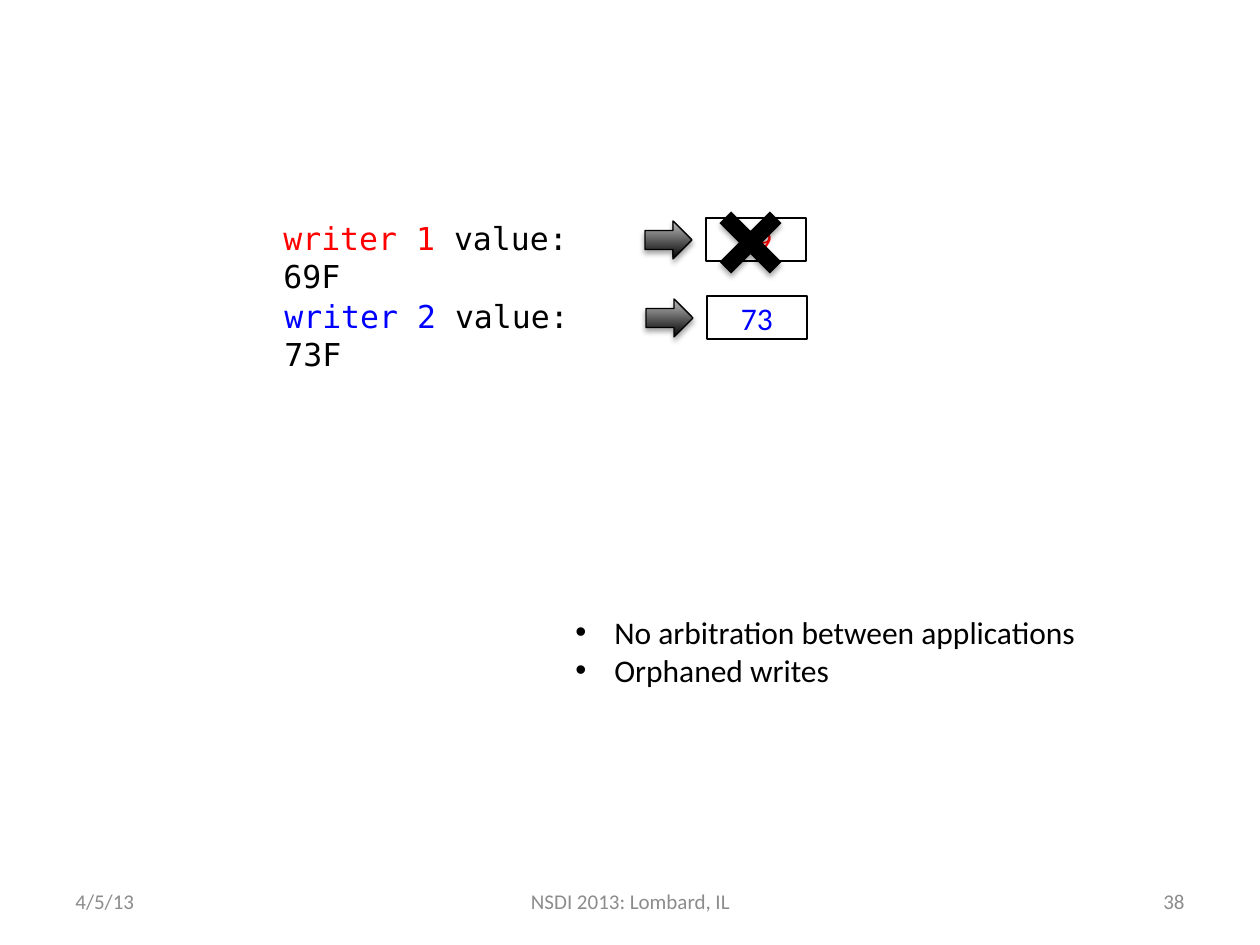
from dataclasses import dataclass

from lxml import etree
from pptx import Presentation, util as u
from pptx.dml.color import RGBColor
from pptx.enum import shapes, text
from pptx.oxml.ns import qn

PX = u.Inches(1) / 126
ROW_STEP = 78


@dataclass(frozen=True)
class Theme:
    black: str = "000000"
    red: str = "FF0000"
    blue: str = "0000FF"
    light: str = "BDBDBD"
    footer: str = "8C8C8C"
    body_font: str = "Calibri"
    code_font: str = "DejaVu Sans Mono"
    body_size: int = 18
    footer_size: int = 12


THEME = Theme()
ALIGN = text.PP_ALIGN
ANCHOR = text.MSO_ANCHOR


def px(length):
    return u.Emu(round(length * PX))


def rgb(color):
    return RGBColor.from_string(color)


def add_bullet(paragraph, indent):
    properties = paragraph._p.get_or_add_pPr()
    properties.set("marL", str(px(indent)))
    properties.set("indent", str(-px(indent)))
    etree.SubElement(properties, qn("a:buFont"), typeface="Arial")
    etree.SubElement(properties, qn("a:buChar"), char="•")


def write_text(shape, paragraphs, *, font=THEME.body_font, size=THEME.body_size,
               align=ALIGN.LEFT, anchor=ANCHOR.TOP, bullet_indent=None):
    """Fill a shape; each paragraph is a list of (wording, color) runs."""
    frame = shape.text_frame
    frame.word_wrap = True
    frame.vertical_anchor = anchor
    for index, runs in enumerate(paragraphs):
        paragraph = frame.add_paragraph() if index else frame.paragraphs[0]
        paragraph.alignment = align
        if bullet_indent:
            add_bullet(paragraph, bullet_indent)
        for wording, color in runs:
            run = paragraph.add_run()
            run.text = wording
            run.font.name = font
            run.font.size = u.Pt(size)
            run.font.color.rgb = rgb(color)


def add_text(slide, box, paragraphs, **text_format):
    shape = slide.shapes.add_textbox(*map(px, box))
    write_text(shape, paragraphs, **text_format)


def add_shape(slide, kind, box, outlined=True):
    shape = slide.shapes.add_shape(kind, *map(px, box))
    shape.shadow.inherit = False
    if outlined:
        shape.line.color.rgb = rgb(THEME.black)
        shape.line.width = u.Pt(0.75)
    else:
        shape.line.fill.background()
    return shape


def add_drop_shadow(shape):
    effects = shape._element.spPr.find(qn("a:effectLst"))
    shadow = etree.SubElement(
        effects, qn("a:outerShdw"), blurRad=str(u.Pt(3.1)), dist=str(u.Pt(1.8)),
        dir="5400000", rotWithShape="0")
    color = etree.SubElement(shadow, qn("a:srgbClr"), val=THEME.black)
    etree.SubElement(color, qn("a:alpha"), val="35000")


def add_value_box(slide, box, value, color):
    shape = add_shape(slide, shapes.MSO_SHAPE.RECTANGLE, box)
    shape.fill.background()
    write_text(shape, [[(value, color)]], align=ALIGN.CENTER, anchor=ANCHOR.MIDDLE)


def add_arrow(slide, box):
    arrow = add_shape(slide, shapes.MSO_SHAPE.RIGHT_ARROW, box)
    arrow.fill.gradient()
    arrow.fill.gradient_angle = 90
    for stop, color, position in zip(arrow.fill.gradient_stops,
                                     (THEME.black, THEME.light), (0, 1)):
        stop.color.rgb = rgb(color)
        stop.position = position
    add_drop_shadow(arrow)


def add_writer(slide, index, value, color):
    shift, drop = index, index * ROW_STEP
    runs = [(f"writer {index + 1}", color), (f" value: {value}F", THEME.black)]
    add_text(slide, (271 + shift, 213 + drop, 318, 50), [runs], font=THEME.code_font)
    add_value_box(slide, (706 + shift, 218 + drop, 100, 43), value, color)
    add_arrow(slide, (645 + shift, 221 + drop, 47, 38))


def add_cross(slide, box):
    cross = add_shape(slide, shapes.MSO_SHAPE.MATH_MULTIPLY, box, outlined=False)
    cross.adjustments[0] = 0.17
    cross.fill.solid()
    cross.fill.fore_color.rgb = rgb(THEME.black)
    add_drop_shadow(cross)


def add_footer(slide, left, width, wording, align):
    add_text(slide, (left, 876, width, 50), [[(wording, THEME.footer)]],
             size=THEME.footer_size, align=align, anchor=ANCHOR.MIDDLE)


def main():
    presentation = Presentation()
    presentation.slide_width, presentation.slide_height = px(1260), px(945)
    slide = presentation.slides.add_slide(presentation.slide_layouts[6])

    for index, (value, color) in enumerate([("69", THEME.red), ("73", THEME.blue)]):
        add_writer(slide, index, value, color)
    add_cross(slide, (702, 194, 97, 97))

    problems = ["No arbitration between applications", "Orphaned writes"]
    add_text(slide, (563, 607, 533, 89),
             [[(problem, THEME.black)] for problem in problems], bullet_indent=39)

    add_footer(slide, 63, 294, "4/5/13", ALIGN.LEFT)
    add_footer(slide, 431, 399, "NSDI 2013: Lombard, IL", ALIGN.CENTER)
    add_footer(slide, 903, 294, "38", ALIGN.RIGHT)
    presentation.save("out.pptx")


if __name__ == "__main__":
    main()
